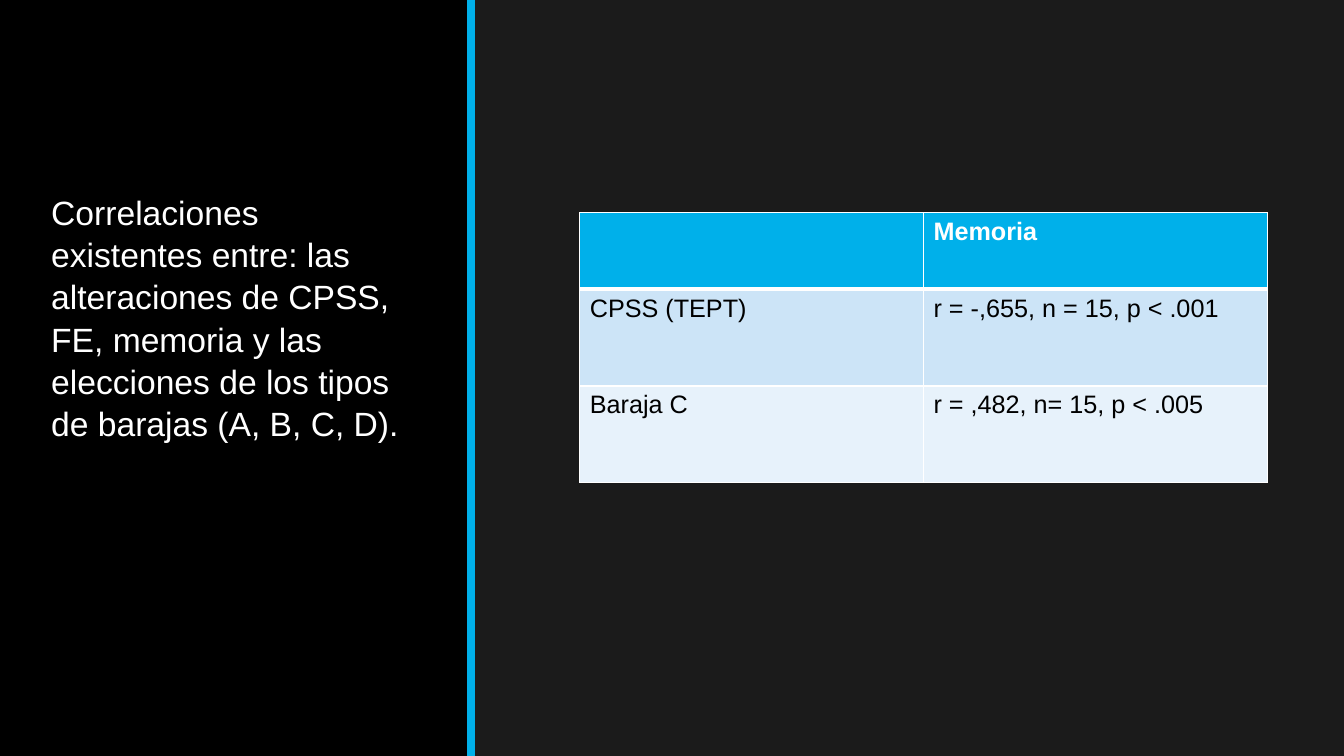
from dataclasses import dataclass

from lxml import etree
from pptx import Presentation, util as u
from pptx.dml import color
from pptx.enum import shapes, text
from pptx.oxml import ns

PX = 9144  # EMU per px, 100 px to the inch
WIDTH, HEIGHT, PANEL_WIDTH = 1333, 750, 467
ACCENT, WHITE, BLACK, BACKDROP = "00B0EA", "FFFFFF", "000000", "1B1B1B"
TITLE = ("Correlaciones existentes entre: las alteraciones de CPSS, FE, memoria "
         "y las elecciones de los tipos de barajas (A, B, C, D).")


@dataclass(frozen=True)
class Row:
    cells: tuple[str, str]
    height: int
    fill: str
    ink: str = BLACK
    bold: bool = False
    top: int = 1
    bottom: int = 1


ROWS = (
    Row(("", "Memoria"), 76, ACCENT, WHITE, bold=True, bottom=3),
    Row(("CPSS (TEPT)", "r = -,655, n = 15, p < .001"), 96, "CCE4F7", top=3),
    Row(("Baraja C", "r = ,482, n= 15, p < .005"), 96, "E7F2FB"),
)


def px(*lengths: int) -> list[u.Emu]:
    return [u.Emu(length * PX) for length in lengths]


def rgb(value: str) -> color.RGBColor:
    return color.RGBColor.from_string(value)


def paint(fill, value: str) -> None:
    fill.solid()
    fill.fore_color.rgb = rgb(value)


def write(para, words: str, ink: str, **formats) -> None:
    span = para.add_run()
    span.text = words
    span.font.color.rgb = rgb(ink)
    for name, value in {"name": "Arial", **formats}.items():
        setattr(span.font, name, value)


def add_borders(cell, row: Row) -> None:
    properties = cell._tc.get_or_add_tcPr()
    widths = {"lnL": 1, "lnR": 1, "lnT": row.top, "lnB": row.bottom}
    for place, (side, points) in enumerate(widths.items()):
        line = etree.Element(ns.qn(f"a:{side}"), w=str(u.Pt(points)))
        solid = etree.SubElement(line, ns.qn("a:solidFill"))
        etree.SubElement(solid, ns.qn("a:srgbClr"), val=WHITE)
        properties.insert(place, line)


def add_panel(page) -> None:
    panel = page.shapes.add_shape(shapes.MSO_SHAPE.RECTANGLE, *px(0, 0, PANEL_WIDTH, HEIGHT))
    panel.shadow.inherit = False
    paint(panel.fill, BLACK)
    panel.line.fill.background()

    divider = page.shapes.add_connector(
        shapes.MSO_CONNECTOR.STRAIGHT, *px(PANEL_WIDTH, 0, PANEL_WIDTH, HEIGHT))
    divider.line.color.rgb = rgb(ACCENT)
    divider.line.width = u.Pt(6)
    etree.SubElement(divider._element.spPr, ns.qn("a:effectLst"))


def add_title(page) -> None:
    box = page.shapes.add_textbox(*px(41, 182, 383, 263))
    frame = box.text_frame
    frame.word_wrap = True
    frame.vertical_anchor = text.MSO_ANCHOR.BOTTOM
    para = frame.paragraphs[0]
    para.line_spacing = 1.05
    write(para, TITLE, WHITE, size=u.Pt(24))


def add_results(page) -> None:
    table = page.shapes.add_table(
        len(ROWS), 2, *px(575, 211, 682, sum(row.height for row in ROWS))).table
    for line, row in zip(table.rows, ROWS):
        line.height, = px(row.height)
        for cell, words in zip(line.cells, row.cells):
            paint(cell.fill, row.fill)
            add_borders(cell, row)
            if words:
                write(cell.text_frame.paragraphs[0], words, row.ink,
                      size=u.Pt(18), bold=row.bold)


def main() -> None:
    deck = Presentation()
    deck.slide_width, deck.slide_height = px(WIDTH, HEIGHT)
    page = deck.slides.add_slide(deck.slide_layouts[6])
    paint(page.background.fill, BACKDROP)

    # Left panel with its divider and title
    add_panel(page)
    add_title(page)

    # Table of correlations
    add_results(page)
    deck.save("out.pptx")


if __name__ == "__main__":
    main()
